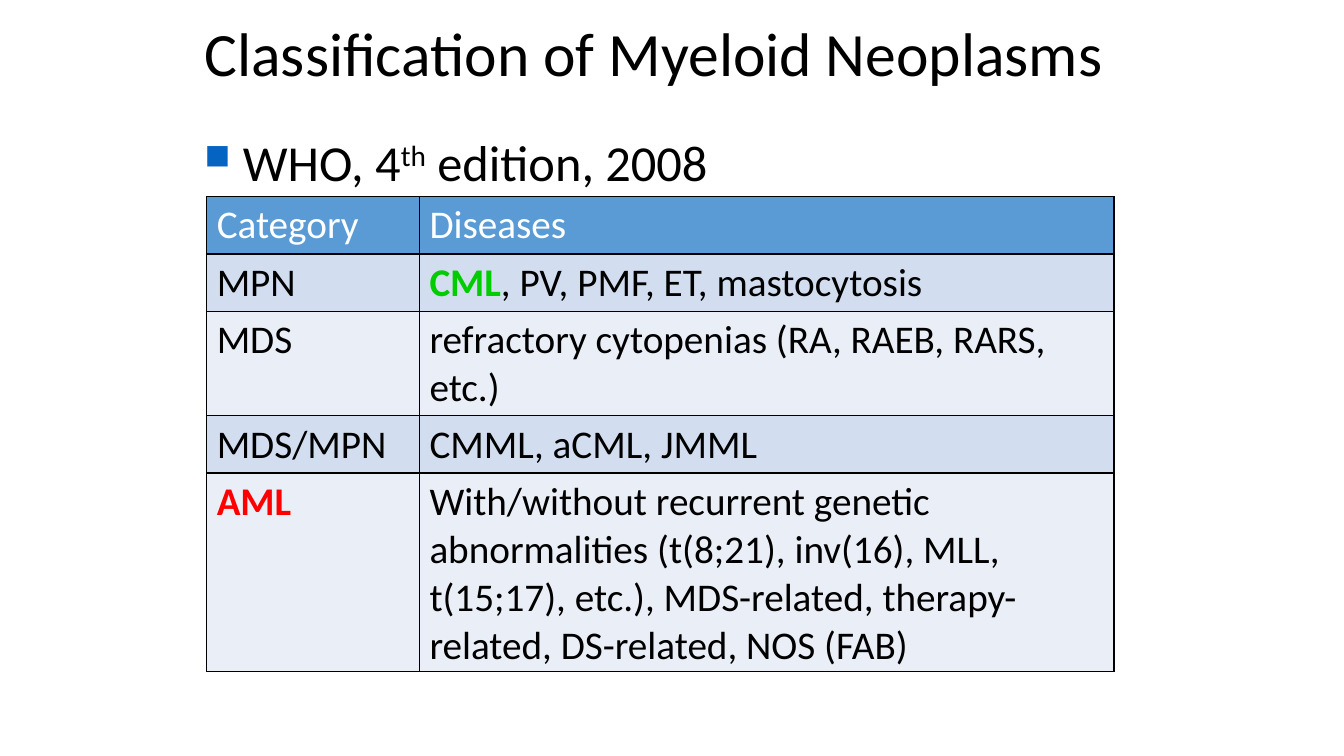
from lxml.etree import SubElement
from pptx import Presentation
from pptx.dml.color import RGBColor
from pptx.enum.text import MSO_ANCHOR
from pptx.oxml.ns import qn
from pptx.util import Inches, Pt

FONT = "Calibri"
BLACK = RGBColor(0x00, 0x00, 0x00)
WHITE = RGBColor(0xFF, 0xFF, 0xFF)
GREEN = RGBColor(0x00, 0xCC, 0x00)
RED = RGBColor(0xFF, 0x00, 0x00)
BULLET_BLUE = RGBColor(0x05, 0x63, 0xC1)
HEADER_BLUE = RGBColor(0x5B, 0x9B, 0xD5)
BANDS = (RGBColor(0xD2, 0xDE, 0xEF), RGBColor(0xEA, 0xEF, 0xF7))

COLUMN_WIDTHS = (2.11, 6.89)
ROW_HEIGHTS = (0.57, 0.57, 1.03, 0.57, 1.97)
CLASSIFICATION = (
    ("Category", "Diseases"),
    ("MPN", "CML, PV, PMF, ET, mastocytosis"),
    ("MDS", "refractory cytopenias (RA, RAEB, RARS, etc.)"),
    ("MDS/MPN", "CMML, aCML, JMML"),
    ("AML", "With/without recurrent genetic abnormalities (t(8;21), inv(16), MLL, "
            "t(15;17), etc.), MDS-related, therapy-related, DS-related, NOS (FAB)"),
)
# Leading words that stand out, by (row, column)
HIGHLIGHTS = {(1, 1): ("CML", GREEN), (4, 0): ("AML", RED)}


def set_font(paragraph, size, color):
    paragraph.font.name = FONT
    paragraph.font.size = Pt(size)
    paragraph.font.color.rgb = color


def add_text_frame(slide, left, top, width, height):
    box = slide.shapes.add_textbox(Inches(left), Inches(top), Inches(width), Inches(height))
    box.text_frame.word_wrap = True
    return box.text_frame


def add_title(slide, left, top, width, height):
    frame = add_text_frame(slide, left, top, width, height)
    frame.vertical_anchor = MSO_ANCHOR.MIDDLE
    title = frame.paragraphs[0]
    title.text = "Classification of Myeloid Neoplasms"
    title.line_spacing = 0.9
    set_font(title, 44, BLACK)


def add_edition(slide, left, top, width, height):
    edition = add_text_frame(slide, left, top, width, height).paragraphs[0]

    # Square bullet with a hanging indent
    properties = edition._p.get_or_add_pPr()
    properties.set("marL", str(Inches(0.38)))
    properties.set("indent", str(-Inches(0.38)))
    bullet_color = SubElement(properties, qn("a:buClr"))
    SubElement(bullet_color, qn("a:srgbClr"), val=str(BULLET_BLUE))
    SubElement(properties, qn("a:buSzPct"), val="70000")
    SubElement(properties, qn("a:buChar"), char="■")
    set_font(edition, 36, BLACK)

    # Edition number with a raised ordinal
    for text, baseline in (("WHO, 4", 0), ("th", 30000), (" edition, 2008", 0)):
        run = edition.add_run()
        run.text = text
        if baseline:
            run._r.get_or_add_rPr().set("baseline", str(baseline))


def add_borders(cell):
    properties = cell._tc.get_or_add_tcPr()
    for position, side in enumerate(("a:lnL", "a:lnR", "a:lnT", "a:lnB")):
        border = SubElement(properties, qn(side), w=str(Pt(1)))
        line_fill = SubElement(border, qn("a:solidFill"))
        SubElement(line_fill, qn("a:srgbClr"), val=str(BLACK))
        properties.insert(position, border)


def fill_cell(cell, text, row, column):
    cell.fill.solid()
    cell.fill.fore_color.rgb = BANDS[(row - 1) % 2] if row else HEADER_BLUE
    add_borders(cell)

    paragraph = cell.text_frame.paragraphs[0]
    set_font(paragraph, 28, BLACK if row else WHITE)
    paragraph.font.bold = False
    lead, lead_color = HIGHLIGHTS.get((row, column), ("", None))
    if lead:
        highlight = paragraph.add_run()
        highlight.text = lead
        highlight.font.bold = True
        highlight.font.color.rgb = lead_color
    rest = text[len(lead):]
    if rest:
        paragraph.add_run().text = rest


def add_classification_table(slide, left, top, width, height):
    table = slide.shapes.add_table(
        len(ROW_HEIGHTS), len(COLUMN_WIDTHS),
        Inches(left), Inches(top), Inches(width), Inches(height)).table
    for column, column_width in zip(table.columns, COLUMN_WIDTHS):
        column.width = Inches(column_width)
    for row, row_height in zip(table.rows, ROW_HEIGHTS):
        row.height = Inches(row_height)
    for row, entries in enumerate(CLASSIFICATION):
        for column, text in enumerate(entries):
            fill_cell(table.cell(row, column), text, row, column)


def main():
    presentation = Presentation()
    presentation.slide_width = Inches(13.33)
    presentation.slide_height = Inches(7.5)
    slide = presentation.slides.add_slide(presentation.slide_layouts[6])
    add_title(slide, 1.93, 0.12, 9.57, 0.88)
    add_classification_table(slide, 2.05, 1.95, sum(COLUMN_WIDTHS), sum(ROW_HEIGHTS))
    add_edition(slide, 1.93, 1.25, 6.27, 1.01)
    presentation.save("out.pptx")


if __name__ == "__main__":
    main()
